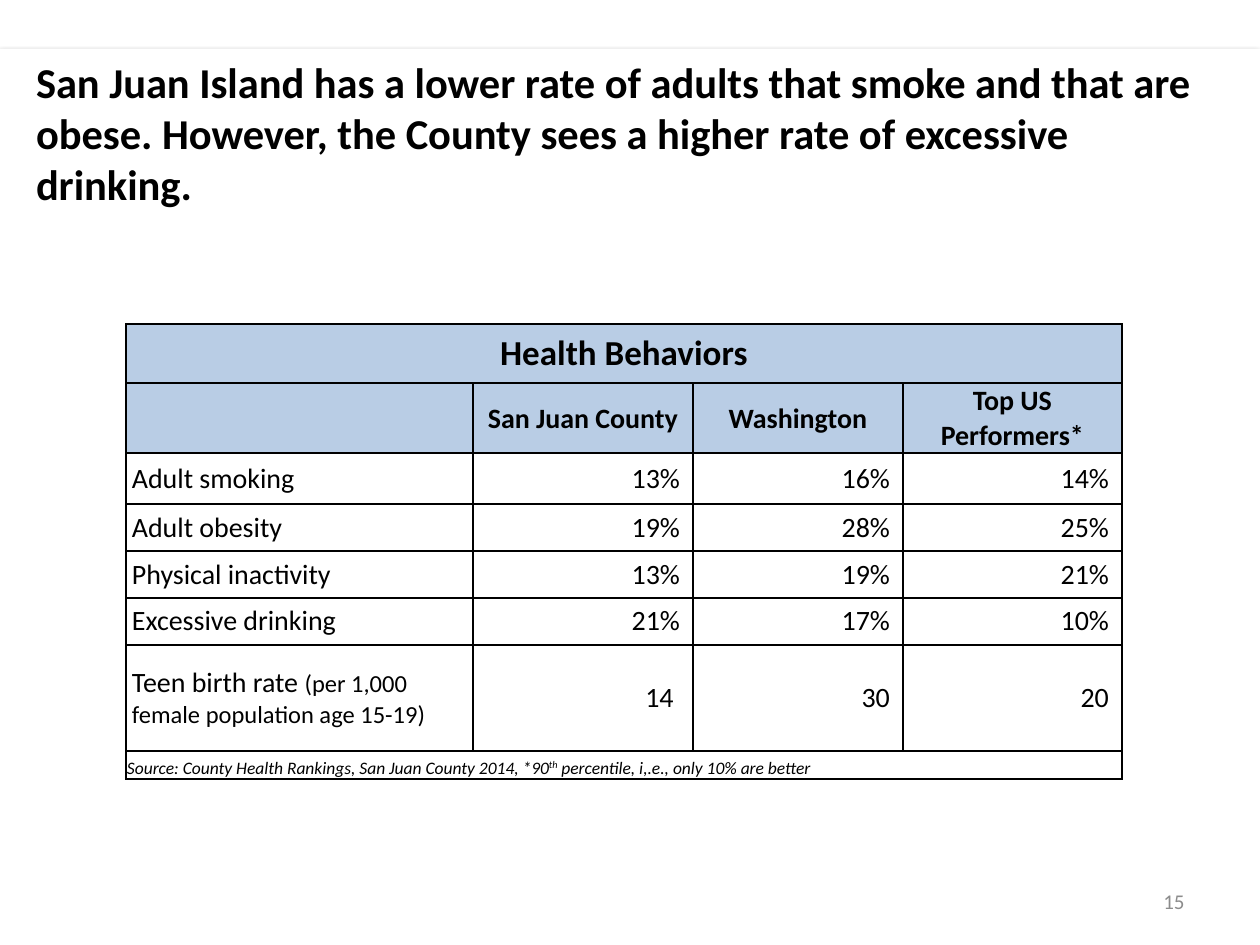
from pptx import Presentation
from pptx.dml.color import RGBColor
from pptx.enum.shapes import MSO_SHAPE
from pptx.enum.text import MSO_ANCHOR, PP_ALIGN
from pptx.oxml import parse_xml
from pptx.oxml.ns import nsdecls
from pptx.util import Emu, Pt

PX = 914400 // 126
BLACK = RGBColor(0x00, 0x00, 0x00)
WHITE = RGBColor(0xFF, 0xFF, 0xFF)
GRAY = RGBColor(0x8C, 0x8C, 0x8C)
HEADER_BLUE = RGBColor(0xB9, 0xCD, 0xE5)

TITLE = ("San Juan Island has a lower rate of adults that smoke and that are obese. "
         "However, the County sees a higher rate of excessive drinking.")
COLUMN_WIDTHS = [347, 220, 210, 219]
ROW_HEIGHTS = [59, 70, 51, 47, 47, 47, 106, 28]
HEADERS = ["", "San Juan County", "Washington", "Top US Performers*"]
MEASURES = [
    ("Adult smoking", "13%", "16%", "14%"),
    ("Adult obesity", "19%", "28%", "25%"),
    ("Physical inactivity", "13%", "19%", "21%"),
    ("Excessive drinking", "21%", "17%", "10%"),
    ("Teen birth rate ", "14 ", "30", "20"),
]
TEEN_NOTE = "(per 1,000 female population age 15-19)"
TIGHT = (1, 1, 1, 0)
LABEL = (6, 6, 6, 6)
NORMAL = (13, 6, 13, 6)


class SlideBuilder:
    font_name = "Calibri"

    def __init__(self, slide):
        self.slide = slide

    def set_text(self, frame, text, size, color=BLACK, bold=False, italic=False,
                 align=PP_ALIGN.LEFT):
        paragraph = frame.paragraphs[0]
        paragraph.alignment = align
        font = paragraph.font
        font.name, font.size = self.font_name, Pt(size)
        font.bold, font.italic = bold, italic
        font.color.rgb = color
        if text:
            paragraph.add_run().text = text
        return paragraph

    def set_margins(self, target, margins):
        (target.margin_left, target.margin_top,
         target.margin_right, target.margin_bottom) = [Emu(m * PX) for m in margins]

    def rectangle(self, left, top, width, height, fill):
        shape = self.slide.shapes.add_shape(
            MSO_SHAPE.RECTANGLE, *[Emu(v * PX) for v in (left, top, width, height)])
        shape.shadow.inherit = False
        shape.fill.solid()
        shape.fill.fore_color.rgb = fill
        shape.line.fill.background()
        return shape

    def shadowed_panel(self, left, top, width, height):
        panel = self.rectangle(left, top, width, height, WHITE)
        panel._element.spPr.find("{*}effectLst").append(parse_xml(
            f'<a:outerShdw {nsdecls("a")} blurRad="{Pt(3.1)}" dist="{Pt(1.8)}" '
            'dir="5400000" rotWithShape="0"><a:srgbClr val="000000">'
            '<a:alpha val="35000"/></a:srgbClr></a:outerShdw>'))

    def title(self, text, left, top, width, height, margins):
        box = self.slide.shapes.add_textbox(
            *[Emu(v * PX) for v in (left, top, width, height)])
        frame = box.text_frame
        frame.word_wrap = True
        frame.vertical_anchor = MSO_ANCHOR.MIDDLE
        self.set_margins(frame, margins)
        self.set_text(frame, text, 24.3, bold=True)

    def page_number(self, number, left, top, width, height):
        frame = self.rectangle(left, top, width, height, WHITE).text_frame
        frame.vertical_anchor = MSO_ANCHOR.MIDDLE
        self.set_text(frame, number, 12, GRAY, align=PP_ALIGN.RIGHT)

    def table(self, left, top, column_widths, row_heights):
        size = (sum(column_widths), sum(row_heights))
        table = self.slide.shapes.add_table(
            len(row_heights), len(column_widths),
            *[Emu(v * PX) for v in (left, top, *size)]).table
        table.first_row = table.horz_banding = False
        for column, width in zip(table.columns, column_widths):
            column.width = Emu(width * PX)
        for row, height in zip(table.rows, row_heights):
            row.height = Emu(height * PX)
        return table

    def cell(self, cell, text, size, fill=WHITE, margins=NORMAL,
             anchor=MSO_ANCHOR.MIDDLE, **style):
        self.set_margins(cell, margins)
        cell.vertical_anchor = anchor
        properties = cell._tc.get_or_add_tcPr()
        for side in ("lnL", "lnR", "lnT", "lnB"):
            properties.append(parse_xml(
                f'<a:{side} {nsdecls("a")} w="{Pt(1)}"><a:solidFill>'
                f'<a:srgbClr val="{BLACK}"/></a:solidFill></a:{side}>'))
        cell.fill.solid()
        cell.fill.fore_color.rgb = fill
        return self.set_text(cell.text_frame, text, size, **style)

    def spanning_row(self, table, row, text, size, **style):
        cells = [table.cell(row, column) for column in range(len(table.columns))]
        cells[0].merge(cells[-1])
        paragraphs = [self.cell(cell, text if column == 0 else "", size,
                                margins=TIGHT, **style)
                      for column, cell in enumerate(cells)]
        return paragraphs[0]


def main():
    presentation = Presentation()
    presentation.slide_width = Emu(1260 * PX)
    presentation.slide_height = Emu(945 * PX)
    slide = presentation.slides.add_slide(presentation.slide_layouts[6])
    builder = SlideBuilder(slide)

    builder.shadowed_panel(0, 49, 1260, 896)
    builder.title(TITLE, 23, 93, 1221, 116, (13, 6, 13, 42))

    table = builder.table(126, 324, COLUMN_WIDTHS, ROW_HEIGHTS)
    header = dict(fill=HEADER_BLUE, bold=True, align=PP_ALIGN.CENTER)
    builder.spanning_row(table, 0, "Health Behaviors", 20, **header)
    for column, text in enumerate(HEADERS):
        builder.cell(table.cell(1, column), text, 16, margins=TIGHT, **header)
    for row, (label, *values) in enumerate(MEASURES, start=2):
        label_paragraph = builder.cell(table.cell(row, 0), label, 16, margins=LABEL)
        for column, value in enumerate(values, start=1):
            builder.cell(table.cell(row, column), value, 16, align=PP_ALIGN.RIGHT)
    note = label_paragraph.add_run()
    note.text = TEEN_NOTE
    note.font.size = Pt(14)

    source = builder.spanning_row(
        table, len(ROW_HEIGHTS) - 1,
        "Source: County Health Rankings, San Juan County 2014, *90", 10,
        anchor=MSO_ANCHOR.BOTTOM, italic=True)
    ordinal = source.add_run()
    ordinal.text = "th"
    ordinal._r.get_or_add_rPr().set("baseline", "30000")
    source.add_run().text = " percentile, i,.e., only 10% are better"

    builder.page_number("15", 903, 876, 294, 50)
    presentation.save("out.pptx")


if __name__ == "__main__":
    main()
